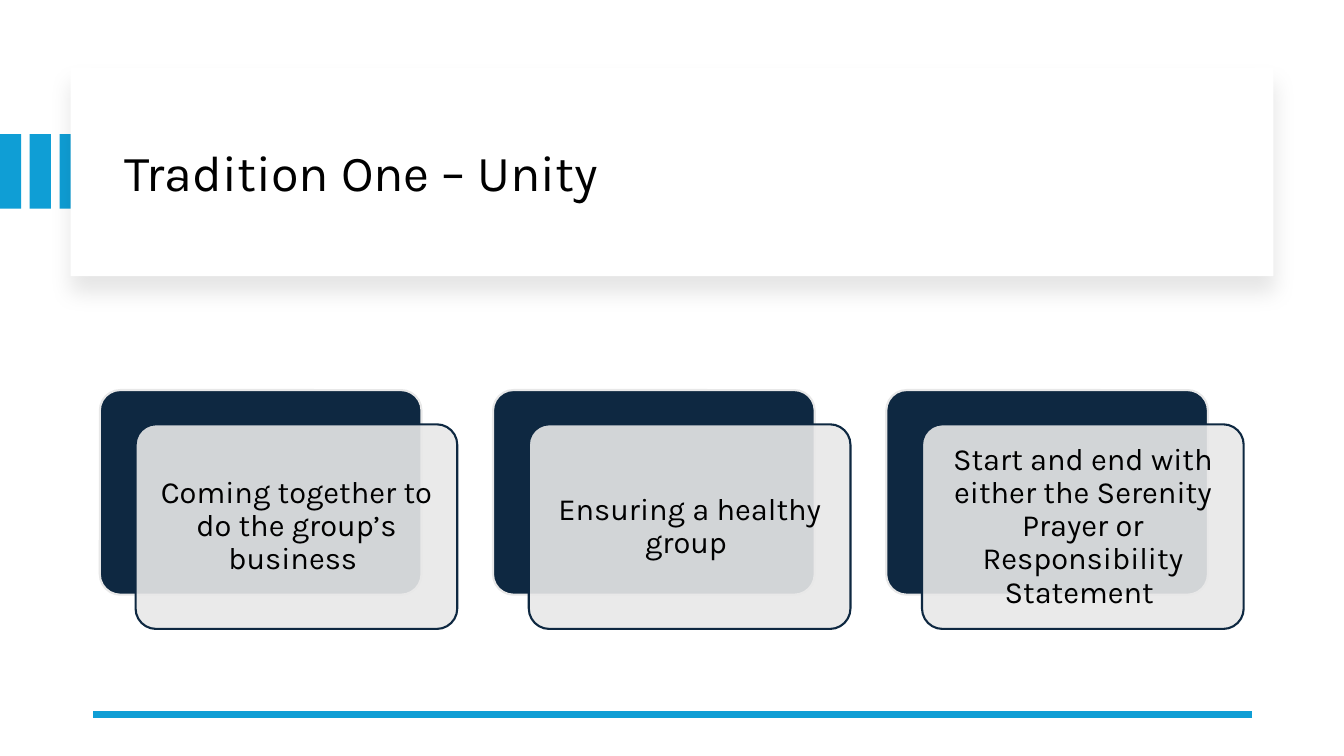
from lxml.etree import SubElement
from pptx import Presentation
from pptx.dml.color import RGBColor
from pptx.enum.shapes import MSO_CONNECTOR, MSO_SHAPE
from pptx.enum.text import MSO_ANCHOR, PP_ALIGN
from pptx.oxml.ns import qn
from pptx.util import Inches, Pt

COLORS = {
    "accent": "0F9ED5",
    "navy": "0E2841",
    "pale": "E8E8E8",
    "white": "FFFFFF",
    "black": "000000",
}
FONT = "Karla"
PRACTICES = [
    "Coming together to do the group’s business ",
    "Ensuring a healthy group ",
    "Start and end with either the Serenity Prayer or Responsibility Statement ",
]


def color(name):
    """Return the named palette colour."""
    return RGBColor.from_string(COLORS[name])


def add_panel(slide, kind, box, fill, outline=None):
    """Add a filled preset shape with an optional outline."""
    panel = slide.shapes.add_shape(kind, *map(Inches, box))
    panel.shadow.inherit = False
    panel.fill.solid()
    panel.fill.fore_color.rgb = color(fill)
    if outline:
        panel.line.color.rgb = color(outline)
        panel.line.width = Pt(1.5)
    else:
        panel.line.fill.background()
    return panel


def set_alpha(color_element, percent):
    """Set the opacity of a colour element."""
    SubElement(color_element, qn("a:alpha"), val=str(percent * 1000))


def add_drop_shadow(panel):
    """Give a panel a soft shadow that falls straight down."""
    effects = panel._element.spPr.find(qn("a:effectLst"))
    shadow = SubElement(
        effects, qn("a:outerShdw"), blurRad=str(Pt(15)), dist=str(Pt(11)),
        dir=str(90 * 60000), algn="t", rotWithShape="0",
    )
    set_alpha(SubElement(shadow, qn("a:srgbClr"), val=COLORS["black"]), 10)


def add_label(slide, box, words, size, align, inset=None):
    """Add a wrapped, vertically centred line of text."""
    frame = slide.shapes.add_textbox(*map(Inches, box)).text_frame
    frame.word_wrap = True
    frame.vertical_anchor = MSO_ANCHOR.MIDDLE
    if inset is not None:
        frame.margin_left = frame.margin_right = Inches(inset)
        frame.margin_top = frame.margin_bottom = Inches(inset)
    paragraph = frame.paragraphs[0]
    paragraph.alignment = align
    paragraph.line_spacing = 0.9
    run = paragraph.add_run()
    run.text = words
    run.font.name = FONT
    run.font.size = Pt(size)
    run.font.color.rgb = color("black")


def add_rule(slide, left, right, top):
    """Add the horizontal accent rule."""
    rule = slide.shapes.add_connector(
        MSO_CONNECTOR.STRAIGHT, *map(Inches, (right, top, left, top)))
    rule.line.color.rgb = color("accent")
    rule.line.width = Pt(4.5)
    SubElement(rule._element.spPr, qn("a:effectLst"))


def add_practice(slide, left, words):
    """Add a navy card overlapped by a translucent card with text."""
    top, width, height = 3.87, 3.19, 2.03
    back = (left, top, width, height)
    front = (left + 0.355, top + 0.34, width, height)
    for box, fill, outline in ((back, "navy", "pale"), (front, "pale", "navy")):
        card = add_panel(slide, MSO_SHAPE.ROUNDED_RECTANGLE, box, fill, outline)
        card.adjustments[0] = 0.1
    set_alpha(card.fill._xPr.solidFill.find(qn("a:srgbClr")), 90)
    label = (front[0] + 0.06, front[1] + 0.06, width - 0.12, height - 0.12)
    add_label(slide, label, words, 22, PP_ALIGN.CENTER, 0.09)


def main():
    """Build the slide and save it."""
    deck = Presentation()
    deck.slide_width, deck.slide_height = Inches(13.33), Inches(7.5)
    slide = deck.slides.add_slide(deck.slide_layouts[6])
    for index in range(3):
        stripe = (index * 0.295, 1.33, 0.21, 0.74)
        add_panel(slide, MSO_SHAPE.RECTANGLE, stripe, "accent")
    banner = add_panel(
        slide, MSO_SHAPE.RECTANGLE, (0.7, 0.67, 11.93, 2.07), "white")
    add_drop_shadow(banner)
    add_label(slide, (1.14, 0.89, 11.13, 1.7), "Tradition One – Unity ", 36,
              PP_ALIGN.LEFT)
    add_rule(slide, 0.92, 12.42, 7.09)
    for index, words in enumerate(PRACTICES):
        add_practice(slide, 0.99 + index * 3.9, words)
    deck.save("out.pptx")


if __name__ == "__main__":
    main()
